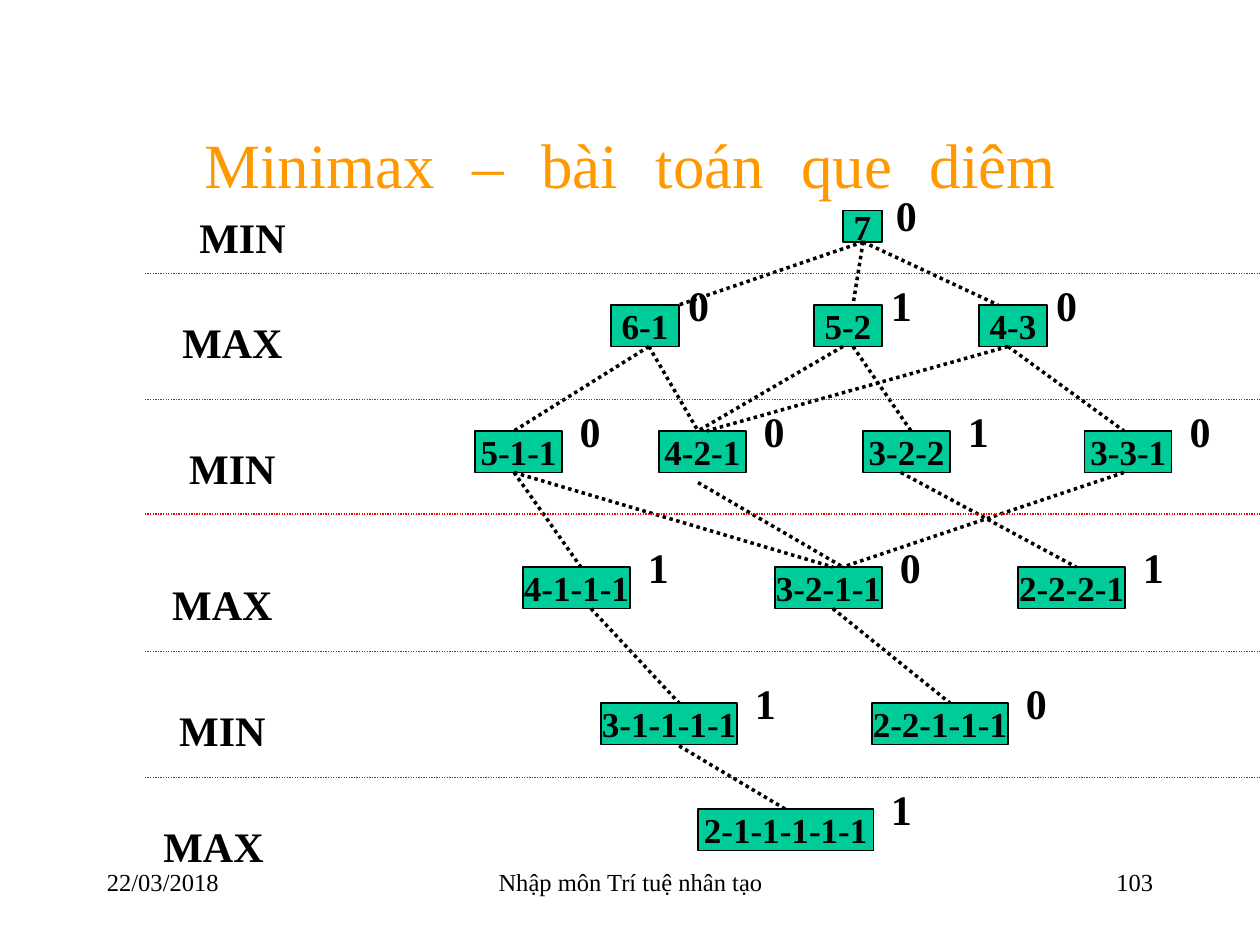
from dataclasses import dataclass
from lxml.etree import SubElement
from pptx import Presentation
from pptx.dml.color import RGBColor
from pptx.enum.dml import MSO_LINE
from pptx.enum.shapes import MSO_CONNECTOR, MSO_SHAPE
from pptx.enum.text import MSO_ANCHOR as Anchor, PP_ALIGN as Align
from pptx.oxml.ns import qn
from pptx.util import Inches, Pt


@dataclass
class Theme:
    font: str = "Times New Roman"
    title: RGBColor = RGBColor(0xFF, 0x99, 0x00)
    ink: RGBColor = RGBColor(0, 0, 0)
    node: RGBColor = RGBColor(0x00, 0xCC, 0x99)
    divider: RGBColor = RGBColor(0xFF, 0, 0)
    title_size: int = 36
    label_size: int = 24
    node_size: int = 20
    footer_size: int = 14


theme = Theme()


def write(shape, text, size, align=Align.CENTER, bold=True, anchor=Anchor.MIDDLE):
    frame = shape.text_frame
    frame.text = text
    frame.word_wrap = not bold
    frame.vertical_anchor = anchor
    para = frame.paragraphs[0]
    para.alignment = align
    font = para.runs[0].font
    font.name, font.size, font.bold = theme.font, Pt(size), bold
    font.color.rgb = theme.ink


def draw_line(x1, y1, x2, y2, color, width):
    line = page.shapes.add_connector(
        MSO_CONNECTOR.STRAIGHT, Inches(x1), Inches(y1), Inches(x2), Inches(y2))
    line.line.color.rgb = color
    line.line.width = Pt(width)
    line.line.dash_style = MSO_LINE.ROUND_DOT
    SubElement(line._element.spPr, qn("a:effectLst"))


deck = Presentation()
deck.slide_width, deck.slide_height = Inches(10), Inches(7.5)
page = deck.slides.add_slide(deck.slide_layouts[5])

footers = [
    ("22/03/2018", 0.75, 2.08, Align.LEFT),
    ("Nhập môn Trí tuệ nhân tạo", 3.42, 3.17, Align.CENTER),
    ("103", 7.17, 2.08, Align.RIGHT),
]
for text, left, width, align in footers:
    box = page.shapes.add_textbox(Inches(left), Inches(6.83), Inches(width), Inches(0.5))
    write(box, text, theme.footer_size, align, False, Anchor.TOP)

title = page.shapes.title
title.left, title.top = Inches(0.75), Inches(0.67)
title.width, title.height = Inches(8.5), Inches(1.25)
title.text_frame.vertical_anchor = Anchor.MIDDLE
para = title.text_frame.paragraphs[0]
para.alignment = Align.CENTER
for index, word in enumerate("Minimax – bài toán que diêm".split()):
    for text in ([" ", word] if index else [word]):
        span = para.add_run()
        span.text = text
        span.font.name, span.font.size = theme.font, Pt(theme.title_size)
        span.font.color.rgb = theme.title
        if text == " ":
            span._r.get_or_add_rPr().set("spc", "1230")

node_widths = {1: 0.31, 2: 0.54, 3: 0.69, 4: 0.85, 5: 1.08, 6: 1.39}
levels = [
    (1.67, 0.25, 0.08, 0.23, [("7", 6.69, "0")]),
    (2.42, 0.33, 0.08, 0.15, [("6-1", 4.85, "0"), ("5-2", 6.46, "1"), ("4-3", 7.77, "0")]),
    (3.42, 0.33, 0.15, 0.15, [("5-1-1", 3.77, "0"), ("4-2-1", 5.23, "0"),
                              ("3-2-2", 6.85, "1"), ("3-3-1", 8.61, "0")]),
    (4.5, 0.33, 0.15, 0.15, [("4-1-1-1", 4.15, "1"), ("3-2-1-1", 6.15, "0"),
                             ("2-2-2-1", 8.08, "1")]),
    (5.58, 0.33, 0.15, 0.15, [("3-1-1-1-1", 4.77, "1"), ("2-2-1-1-1", 6.92, "0")]),
    (6.42, 0.33, 0.15, 0.15, [("2-1-1-1-1-1", 5.54, "1")]),
]
for top, height, gap, value_width, nodes in levels:
    value_height = 0.25 if top == 1.67 else 0.17
    for state, left, score in nodes:
        width = node_widths[len(state.split("-"))]
        node = page.shapes.add_shape(
            MSO_SHAPE.RECTANGLE, Inches(left), Inches(top), Inches(width), Inches(height))
        node.fill.solid()
        node.fill.fore_color.rgb = theme.node
        node.line.color.rgb = theme.ink
        node.line.width = Pt(0.75)
        value = page.shapes.add_shape(
            MSO_SHAPE.OVAL, Inches(left + width + gap), Inches(top - 0.09),
            Inches(value_width), Inches(value_height))
        value.fill.background()
        value.line.fill.background()
        for shape, text, size in ((node, state, theme.node_size), (value, score, theme.label_size)):
            shape.shadow.inherit = False
            write(shape, text, size)
            frame = shape.text_frame
            frame.margin_left = frame.margin_right = frame.margin_top = frame.margin_bottom = 0

moves = [
    (1.92, 2.42, [(6.85, 6.77), (6.85, 7.92), (6.85, 5.39)]),
    (2.75, 3.42, [(5.15, 4.08), (5.15, 5.54), (6.69, 5.54), (6.77, 7.23),
                  (8, 5.61), (8, 8.92)]),
    (3.75, 4.5, [(4.08, 4.61), (4.08, 6.61), (8.92, 6.69), (7.15, 8.54)]),
    (3.83, 4.5, [(5.54, 6.69)]),
    (4.83, 5.58, [(4.69, 5.39), (6.61, 7.54)]),
    (5.92, 6.42, [(5.39, 6.23)]),
]
for start, end, pairs in moves:
    for parent, child in pairs:
        draw_line(parent, start, child, end, theme.ink, 2)

players = [
    ("MIN", 1.31, 1.67), ("MAX", 1.23, 2.5), ("MIN", 1.23, 3.5),
    ("MAX", 1.15, 4.58), ("MIN", 1.15, 5.58), ("MAX", 1.08, 6.5),
]
for player, left, top in players:
    box = page.shapes.add_textbox(Inches(left), Inches(top), Inches(1.23), Inches(0.42))
    write(box, player, theme.label_size)

for height in (2.17, 3.17, 4.08, 5.17, 6.17):
    draw_line(1.15, height, 10, height, theme.divider, 0.75)

deck.save("out.pptx")
